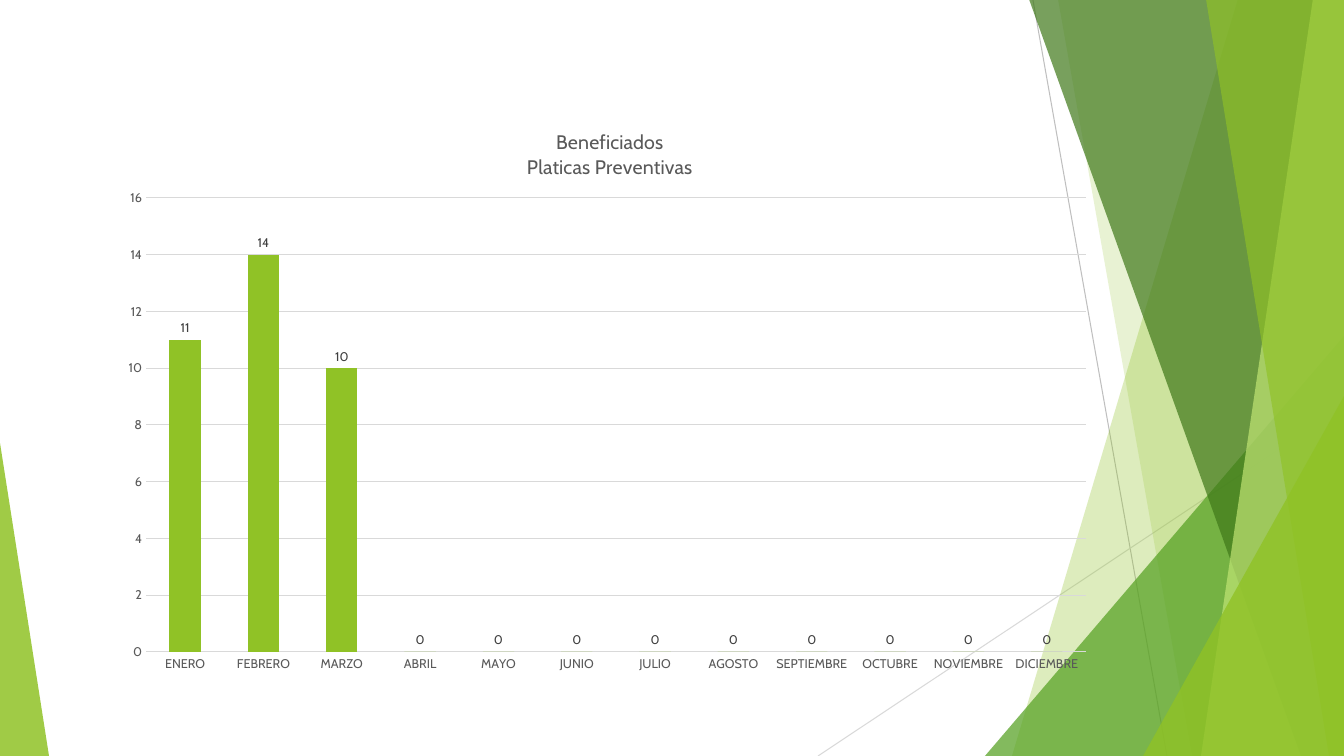
from lxml.etree import SubElement
from pptx import Presentation
from pptx.chart.data import CategoryChartData
from pptx.dml.color import RGBColor
from pptx.enum.chart import XL_CHART_TYPE, XL_LABEL_POSITION, XL_TICK_MARK
from pptx.enum.shapes import MSO_CONNECTOR, MSO_SHAPE
from pptx.oxml import parse_xml
from pptx.oxml.ns import nsdecls, qn
from pptx.util import Pt

WIDTH, HEIGHT = 1344, 756
SCALE = 12192000 / WIDTH
CHART_FRAME = (108, 103, 998, 581)
PLOT_FRAME = (146, 198, 940, 454)
TITLE_CORNER = (524, 126)

MONTHS = ["ENERO", "FEBRERO", "MARZO", "ABRIL", "MAYO", "JUNIO", "JULIO",
          "AGOSTO", "SEPTIEMBRE", "OCTUBRE", "NOVIEMBRE", "DICIEMBRE"]
BENEFICIARIES = [11, 14, 10] + [0] * 9


def px(length):
    return round(length * SCALE)


def color(value):
    return RGBColor.from_string(value)


def assign(target, values):
    for name, value in values.items():
        setattr(target, name, value)


class Page:
    font_name = "Cabin"
    green = "90C226"
    gray = "595959"
    grid = "D9D9D9"

    def __init__(self, deck):
        self.slide = deck.slides.add_slide(deck.slide_layouts[6])
        self.shapes = self.slide.shapes

    def line(self, start, end, tone):
        connector = self.shapes.add_connector(
            MSO_CONNECTOR.STRAIGHT, *map(px, start + end))
        connector.line.color.rgb = color(tone)
        connector.line.width = Pt(0.75)
        SubElement(connector.element.spPr, qn("a:effectLst"))

    def paint(self, shape, tone, opacity):
        shape.shadow.inherit = False
        shape.fill.solid()
        shape.fill.fore_color.rgb = color(tone)
        shape.line.fill.background()
        solid = shape.element.spPr.find(qn("a:solidFill"))
        SubElement(solid[0], qn("a:alpha"), val=str(opacity * 1000))

    def band(self, top_left, bottom_left, bottom_right, tone, opacity):
        builder = self.shapes.build_freeform(top_left, -1, scale=SCALE)
        builder.add_line_segments(
            [(WIDTH, -1), (WIDTH, HEIGHT), (bottom_right, HEIGHT), (bottom_left, HEIGHT)])
        self.paint(builder.convert_to_shape(), tone, opacity)

    def triangle(self, left, top, width, apex, tone, opacity):
        shape = self.shapes.add_shape(
            MSO_SHAPE.ISOSCELES_TRIANGLE, *map(px, (left, top, width, HEIGHT - top)))
        shape.adjustments[0] = apex
        self.paint(shape, tone, opacity)

    def style_font(self, font, size, tone):
        assign(font, {"name": self.font_name, "size": Pt(size), "bold": False})
        font.color.rgb = color(tone)

    def place(self, parent, index, values):
        for old in parent.findall(qn("c:layout")):
            parent.remove(old)
        layout = parse_xml(f"<c:layout {nsdecls('c')}><c:manualLayout/></c:layout>")
        for name, value in values.items():
            SubElement(layout[0], qn(f"c:{name}"), val=str(value))
        parent.insert(index, layout)

    def title(self, chart, lines):
        heading = chart.chart_title
        frame = heading.text_frame
        frame.text = "\n".join(lines)
        for para in frame.paragraphs:
            for span in para.runs:
                self.style_font(span.font, 14, self.gray)
        left, top, width, height = CHART_FRAME
        self.place(heading.element, 1, {
            "xMode": "edge", "yMode": "edge",
            "x": round((TITLE_CORNER[0] - left) / width, 4),
            "y": round((TITLE_CORNER[1] - top) / height, 4)})

    def column_chart(self, categories, values, title_lines):
        data = CategoryChartData()
        data.categories = categories
        data.add_series("Series 1", values)
        chart = self.shapes.add_chart(
            XL_CHART_TYPE.COLUMN_CLUSTERED, *map(px, CHART_FRAME), data).chart
        chart.has_legend = False
        self.style_font(chart.font, 10, "000000")
        self.title(chart, title_lines)

        for axis in (chart.category_axis, chart.value_axis):
            assign(axis, {"major_tick_mark": XL_TICK_MARK.NONE,
                          "minor_tick_mark": XL_TICK_MARK.NONE})
            axis.format.line.fill.background()
            self.style_font(axis.tick_labels.font, 9, self.gray)
        assign(chart.value_axis, {"minimum_scale": 0, "maximum_scale": 16,
                                  "major_unit": 2, "has_major_gridlines": True})
        grid_line = chart.value_axis.major_gridlines.format.line
        grid_line.color.rgb = color(self.grid)
        grid_line.width = Pt(0.75)

        plot = chart.plots[0]
        assign(plot, {"gap_width": 150, "vary_by_categories": False})
        series = plot.series[0]
        series.format.fill.solid()
        series.format.fill.fore_color.rgb = color(self.green)
        labels = series.data_labels
        assign(labels, {"show_value": True, "position": XL_LABEL_POSITION.OUTSIDE_END})
        self.style_font(labels.font, 9, "404040")

        left, top, width, height = CHART_FRAME
        plot_left, plot_top, plot_width, plot_height = PLOT_FRAME
        area = chart.element.find(".//" + qn("c:plotArea"))
        self.place(area, 0, {
            "layoutTarget": "inner", "xMode": "edge", "yMode": "edge",
            "x": round((plot_left - left) / width, 4),
            "y": round((plot_top - top) / height, 4),
            "w": round(plot_width / width, 4),
            "h": round(plot_height / height, 4)})


def main():
    deck = Presentation()
    assign(deck, {"slide_width": px(WIDTH), "slide_height": px(HEIGHT)})
    page = Page(deck)
    page.line((1033, 0), (1167, HEIGHT), "BFBFBF")
    page.line((WIDTH, 406), (818, HEIGHT), page.grid)
    page.band(1238, 1012, WIDTH, page.green, 30)
    page.band(1058, 1192, WIDTH, page.green, 20)
    page.triangle(985, 336, 359, 1, "54A021", 72)
    page.band(1029, 1301, WIDTH, "3F7819", 70)
    page.band(1313, 1201, WIDTH, "C0E474", 70)
    page.band(1206, 1329, WIDTH, page.green, 65)
    page.triangle(1143, 396, 201, 1, page.green, 80)
    page.triangle(0, 443, 49, 0, page.green, 85)
    page.column_chart(MONTHS, BENEFICIARIES, ["Beneficiados", "Platicas Preventivas"])
    deck.save("out.pptx")


if __name__ == "__main__":
    main()
